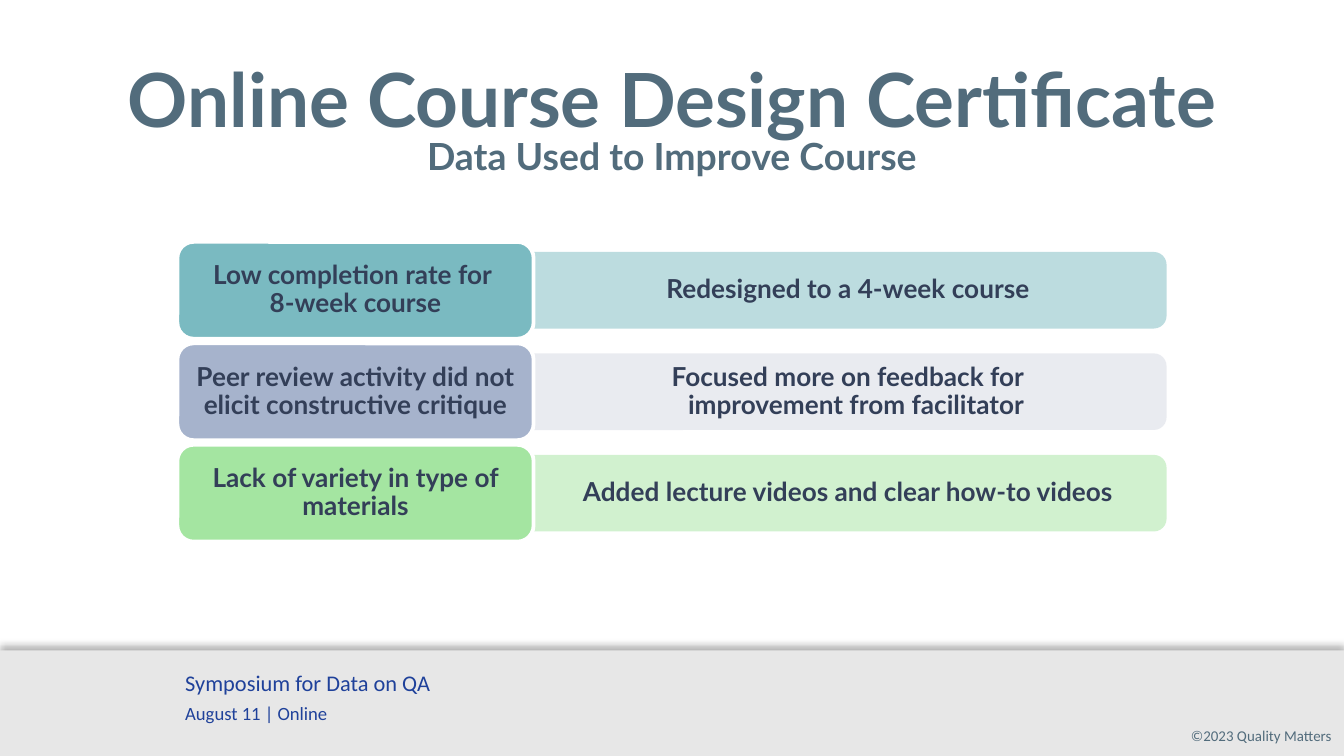
"""Build the course design certificate slide with its three problem and remedy rows."""
from dataclasses import dataclass

from lxml import etree
from pptx import Presentation
from pptx import util as u
from pptx.dml.color import RGBColor
from pptx.enum import shapes, text
from pptx.oxml import ns

WHITE = RGBColor(0xFF, 0xFF, 0xFF)
FOOTER_GREY = RGBColor(0xE7, 0xE7, 0xE7)
SLATE = RGBColor(0x52, 0x6C, 0x7C)
BLUE = RGBColor(0x1F, 0x41, 0x9A)
NAVY = RGBColor(0x33, 0x3F, 0x58)
TEAL = RGBColor(0x7A, 0xBA, 0xC1)
LAVENDER = RGBColor(0xA6, 0xB3, 0xCC)
PALE_LAVENDER = RGBColor(0xD4, 0xD8, 0xE2)
GREEN = RGBColor(0xA4, 0xE5, 0xA1)

PAGE_WIDTH = 10
PAGE_HEIGHT = PAGE_WIDTH * 9 / 16
FOOTER_TOP = 4.84
ROW_TOP, ROW_SPAN = 1.8, 1.51
BLOCK_LEFT, BLOCK_WIDTH, BLOCK_HEIGHT = 1.32, 2.65, 0.72
BAR_LEFT, BAR_LENGTH, BAR_HEIGHT = 3.97, 4.71, 0.57
PROBLEM_WIDTH, PROBLEM_HEIGHT = 2.58, 0.65
REMEDY_WIDTH, REMEDY_HEIGHT = 4.68, 0.52
HANGING = 0.12
ROW_INSETS = (0.06, 0.03, 0.06, 0.03)


@dataclass(frozen=True)
class Style:
    font: str
    size: float
    color: RGBColor
    bold: bool = False
    align: text.PP_ALIGN = text.PP_ALIGN.LEFT


@dataclass(frozen=True)
class Row:
    problem: str
    remedy: str
    block_color: RGBColor
    bar_color: RGBColor


CENTER = text.PP_ALIGN.CENTER
TITLE = Style("Lato", 40, SLATE, True, CENTER)
SUBTITLE = Style("Lato", 20, SLATE, True, CENTER)
ROW_STYLE = Style("Lato", 14, NAVY, True, CENTER)
EVENT = Style("Calibri", 12, BLUE)
EVENT_DATE = Style("Calibri", 10, BLUE)
COPYRIGHT = Style("Calibri", 8, SLATE, align=text.PP_ALIGN.RIGHT)

ROWS = (
    Row("Low completion rate for \n8-week course", "Redesigned to a 4-week course", TEAL, TEAL),
    Row("Peer review activity did not elicit constructive critique",
        "Focused more on feedback for\nimprovement from facilitator", LAVENDER, PALE_LAVENDER),
    Row("Lack of variety in type of materials",
        "Added lecture videos and clear how-to videos", GREEN, GREEN),
)


def add_text(page, left: float, top: float, width: float, height: float,
             lines: list[tuple[str, Style]], insets=(0.1, 0.05, 0.1, 0.05),
             anchor=text.MSO_ANCHOR.MIDDLE):
    box = page.shapes.add_textbox(*map(u.Inches, (left, top, width, height)))
    frame = box.text_frame
    frame.word_wrap = True
    frame.vertical_anchor = anchor
    (frame.margin_left, frame.margin_top,
     frame.margin_right, frame.margin_bottom) = map(u.Inches, insets)
    for index, (words, style) in enumerate(lines):
        para = frame.add_paragraph() if index else frame.paragraphs[0]
        para.text = words
        para.alignment = style.align
        para.font.name = style.font
        para.font.size = u.Pt(style.size)
        para.font.bold = style.bold
        para.font.color.rgb = style.color
    return frame


def add_filled(page, kind: shapes.MSO_SHAPE, left: float, top: float,
               width: float, height: float, color: RGBColor):
    shape = page.shapes.add_shape(kind, *map(u.Inches, (left, top, width, height)))
    shape.shadow.inherit = False
    shape.fill.solid()
    shape.fill.fore_color.rgb = color
    shape.line.fill.background()
    return shape


def set_alpha(color_element, percent: int) -> None:
    etree.SubElement(color_element, ns.qn("a:alpha"), val=str(percent * 1000))


def add_footer(page) -> None:
    band = add_filled(page, shapes.MSO_SHAPE.RECTANGLE, 0, FOOTER_TOP,
                      PAGE_WIDTH, PAGE_HEIGHT - FOOTER_TOP, FOOTER_GREY)
    effects = band.element.spPr.find(ns.qn("a:effectLst"))
    shadow = etree.SubElement(effects, ns.qn("a:outerShdw"), blurRad=str(u.Pt(4)),
                              dist=str(u.Pt(3)), dir=str(270 * 60000), rotWithShape="0")
    set_alpha(etree.SubElement(shadow, ns.qn("a:srgbClr"), val="000000"), 29)
    top = text.MSO_ANCHOR.TOP
    add_text(page, 8.32, 5.36, 1.59, 0.24, [("©2023 Quality Matters", COPYRIGHT)],
             (0.1, 0.05, 0, 0.05), top)
    event = add_text(page, 1.28, 4.93, 6.39, 0.51,
                     [("Symposium for Data on QA", EVENT),
                      ("August 11 | Online", EVENT_DATE)], anchor=top)
    event.paragraphs[1].space_before = u.Pt(3)


def add_row(page, row: Row, top: float) -> None:
    middle = top + BLOCK_HEIGHT / 2
    bar = add_filled(page, shapes.MSO_SHAPE.ROUND_2_SAME_RECTANGLE,
                     BAR_LEFT + (BAR_LENGTH - BAR_HEIGHT) / 2, middle - BAR_LENGTH / 2,
                     BAR_HEIGHT, BAR_LENGTH, row.bar_color)
    bar.rotation = 90
    set_alpha(bar.element.spPr.find(ns.qn("a:solidFill"))[0], 50)
    remedy = add_text(page, BAR_LEFT, middle - REMEDY_HEIGHT / 2, REMEDY_WIDTH, REMEDY_HEIGHT,
                      [(row.remedy, ROW_STYLE)], ROW_INSETS)
    properties = remedy.paragraphs[0]._p.get_or_add_pPr()
    properties.set("marL", str(u.Inches(HANGING)))
    properties.set("indent", str(-u.Inches(HANGING)))

    block = add_filled(page, shapes.MSO_SHAPE.ROUNDED_RECTANGLE,
                       BLOCK_LEFT, top, BLOCK_WIDTH, BLOCK_HEIGHT, row.block_color)
    block.line.color.rgb = WHITE
    block.line.width = u.Pt(2)
    problem = add_text(page, BLOCK_LEFT + (BLOCK_WIDTH - PROBLEM_WIDTH) / 2,
                       middle - PROBLEM_HEIGHT / 2, PROBLEM_WIDTH, PROBLEM_HEIGHT,
                       [(row.problem, ROW_STYLE)], ROW_INSETS)
    for frame in (remedy, problem):
        frame.paragraphs[0].line_spacing = 0.9


def main() -> None:
    deck = Presentation()
    deck.slide_width = u.Inches(PAGE_WIDTH)
    deck.slide_height = u.Inches(PAGE_HEIGHT)
    page = deck.slides.add_slide(deck.slide_layouts[6])
    add_footer(page)
    add_text(page, 0, 0.5, PAGE_WIDTH, 0.45, [("Online Course Design Certificate", TITLE)])
    for index, row in enumerate(ROWS):
        add_row(page, row, ROW_TOP + index * ROW_SPAN / (len(ROWS) - 1))
    add_text(page, 0, 0.93, PAGE_WIDTH, 0.45, [("Data Used to Improve Course", SUBTITLE)])
    deck.save("out.pptx")


if __name__ == "__main__":
    main()
